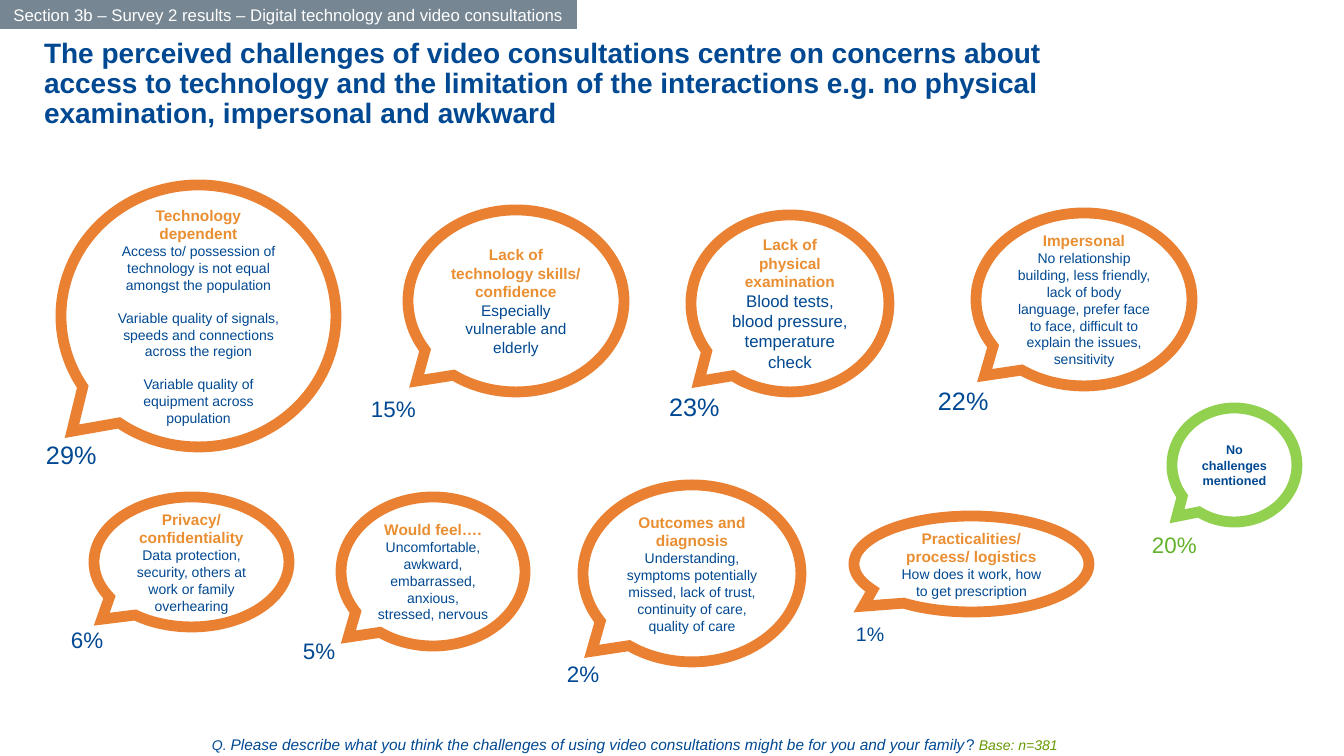
import pptx
import pptx.dml.color
import pptx.enum.shapes
import pptx.enum.text
import pptx.oxml.ns
import pptx.util
from dataclasses import dataclass
from lxml import etree

SECTION = "Section 3b – Survey 2 results – Digital technology and video consultations"
TITLE = ("The perceived challenges of video consultations centre on concerns about access to "
         "technology and the limitation of the interactions e.g. no physical examination, "
         "impersonal and awkward")


@dataclass(frozen=True)
class Theme:
    font: str = "Arial"
    navy: str = "004992"
    heading: str = "EA8E32"
    outline: str = "EA8132"
    green_outline: str = "92D050"
    green_text: str = "64B22D"
    base_green: str = "669900"
    grey: str = "768692"
    white: str = "FFFFFF"
    title_size: int = 20
    section_size: int = 12
    heading_size: int = 11
    body_size: int = 10
    note_size: int = 9
    outline_width: float = 7.75


THEME = Theme()

# bubble and share corners in px; the last number is the type size of the share
CHALLENGES = [
    dict(bubble=(61, 185, 275, 262), headings=["Technology", "dependent"],
         details=["Access to/ possession of technology is not equal amongst the population",
                  "Variable quality of signals, speeds and connections across the region",
                  "Variable quality of equipment across population"],
         share=("29%", 36, 434, 18)),
    dict(bubble=(408, 210, 216, 182), headings=["Lack of technology skills/ confidence"],
         details=["Especially vulnerable and elderly"], detail_size=11,
         share=("15%", 361, 390, 16)),
    dict(bubble=(691, 215, 198, 177), headings=["Lack of physical examination"],
         details=["Blood tests, blood pressure, temperature check"], detail_size=12,
         share=("23%", 659, 386, 18)),
    dict(bubble=(976, 213, 216, 173), headings=["Impersonal"],
         details=["No relationship building, less friendly, lack of body language, prefer face "
                  "to face, difficult to explain the issues, sensitivity"],
         share=("22%", 928, 380, 18)),
    dict(bubble=(94, 497, 195, 130), headings=["Privacy/ confidentiality"],
         details=["Data protection, security, others at work or family overhearing"],
         share=("6%", 61, 621, 16)),
    dict(bubble=(341, 497, 184, 149), headings=["Would feel…."],
         details=["Uncomfortable, awkward, embarrassed, anxious, stressed, nervous"],
         share=("5%", 293, 632, 16)),
    dict(bubble=(583, 485, 218, 177), headings=["Outcomes and diagnosis"],
         details=["Understanding, symptoms potentially missed, lack of trust, continuity of "
                  "care, quality of care"],
         share=("2%", 557, 655, 16)),
    dict(bubble=(854, 516, 235, 96), headings=["Practicalities/ process/ logistics"],
         details=["How does it work, how to get prescription"],
         share=("1%", 846, 617, 14)),
    dict(bubble=(1172, 408, 125, 114), headings=["No challenges mentioned"], details=[],
         heading_size=THEME.note_size, heading_color=THEME.navy,
         outline=THEME.green_outline, tail=(-0.46, 0.45),
         share=("20%", 1142, 526, 16), share_color=THEME.green_text),
]

QUESTION = [
    ("Q. ", dict(size=10, italic=True)),
    ("Please describe what you think the challenges of using video consultations might be "
     "for you and your family", dict(size=11, italic=True)),
    ("? ", dict(size=11)),
    ("Base: n=381", dict(size=10, italic=True, color=THEME.base_green)),
]

PX_PER_INCH = 100.8
PX_PER_POINT = PX_PER_INCH / 72
TAIL = (-0.46, 0.44)
DETAIL_GAP = 11.5
ALIGN = pptx.enum.text.PP_ALIGN
ANCHOR = pptx.enum.text.MSO_ANCHOR
SHAPES = pptx.enum.shapes.MSO_SHAPE


def px(length):
    return pptx.util.Inches(length / PX_PER_INCH)


def rgb(color):
    return pptx.dml.color.RGBColor.from_string(color)


def set_all(target, values):
    for name, value in values.items():
        setattr(target, name, value)


def add_span(para, text, size, color=THEME.navy, bold=False, italic=False):
    span = para.add_run()
    span.text = text
    set_all(span.font, dict(name=THEME.font, size=pptx.util.Pt(size), bold=bold, italic=italic))
    span.font.color.rgb = rgb(color)


def write(box, lines, align=ALIGN.LEFT, anchor=ANCHOR.TOP, wrap=True, margin=10):
    """Fill a box with lines, each a list of (text, format) spans and a space before."""
    frame = box.text_frame
    set_all(frame, dict(word_wrap=wrap, vertical_anchor=anchor,
                        auto_size=pptx.enum.text.MSO_AUTO_SIZE.NONE,
                        margin_left=px(margin), margin_right=px(margin),
                        margin_top=px(5), margin_bottom=px(5)))
    for index, (spans, gap) in enumerate(lines):
        para = frame.add_paragraph() if index else frame.paragraphs[0]
        para.alignment = align
        if gap:
            para.space_before = pptx.util.Pt(gap)
        for text, style in spans:
            add_span(para, text, **style)


def add_shape(page, kind, area):
    shape = page.shapes.add_shape(kind, *map(px, area))
    shape.shadow.inherit = False
    return shape


def add_bubble(page, item):
    bubble = add_shape(page, SHAPES.OVAL_CALLOUT, item["bubble"])
    for index, offset in enumerate(item.get("tail", TAIL)):
        bubble.adjustments[index] = offset
    bubble.fill.background()
    bubble.line.color.rgb = rgb(item.get("outline", THEME.outline))
    bubble.line.width = pptx.util.Pt(THEME.outline_width)
    outline = bubble.element.spPr.find(pptx.oxml.ns.qn("a:ln"))
    etree.SubElement(outline, pptx.oxml.ns.qn("a:miter"), lim="800000")

    heading = dict(size=item.get("heading_size", THEME.heading_size), bold=True,
                   color=item.get("heading_color", THEME.heading))
    detail = dict(size=item.get("detail_size", THEME.body_size))
    lines = [([(text, heading)], 0) for text in item["headings"]]
    lines += [([(text, detail)], DETAIL_GAP if index else 0)
              for index, text in enumerate(item["details"])]
    write(bubble, lines, align=ALIGN.CENTER, anchor=ANCHOR.MIDDLE)


def add_share(page, item):
    """Add the percentage, in a box sized from its digits and type size."""
    text, left, top, size = item["share"]
    ems = 0.56 * (len(text) - 1) + 0.89
    width = 20 + round(ems * size * PX_PER_POINT)
    height = 13 + round(1.5 * size)
    box = page.shapes.add_textbox(*map(px, (left, top, width, height)))
    style = dict(size=size, color=item.get("share_color", THEME.navy))
    write(box, [([(text, style)], 0)], wrap=False)


def main():
    deck = pptx.Presentation()
    deck.slide_width, deck.slide_height = px(1344), px(756)
    page = deck.slides.add_slide(deck.slide_layouts[5])

    title = page.shapes.title
    set_all(title, dict(left=px(20), top=px(34), width=px(1106), height=px(152)))
    write(title, [([(TITLE, dict(size=THEME.title_size, bold=True))], 0)], margin=24)
    title.text_frame.paragraphs[0].line_spacing = 0.9

    question = page.shapes.add_textbox(*map(px, (202, 730, 918, 29)))
    write(question, [(QUESTION, 0)])

    for item in CHALLENGES:
        add_bubble(page, item)
        add_share(page, item)

    banner = add_shape(page, SHAPES.RECTANGLE, (0, 0, 577, 29))
    banner.fill.solid()
    banner.fill.fore_color.rgb = rgb(THEME.grey)
    banner.line.fill.background()
    style = dict(size=THEME.section_size, color=THEME.white)
    write(banner, [([(SECTION, style)], 0)], align=ALIGN.CENTER, anchor=ANCHOR.MIDDLE)

    deck.save("out.pptx")


if __name__ == "__main__":
    main()
